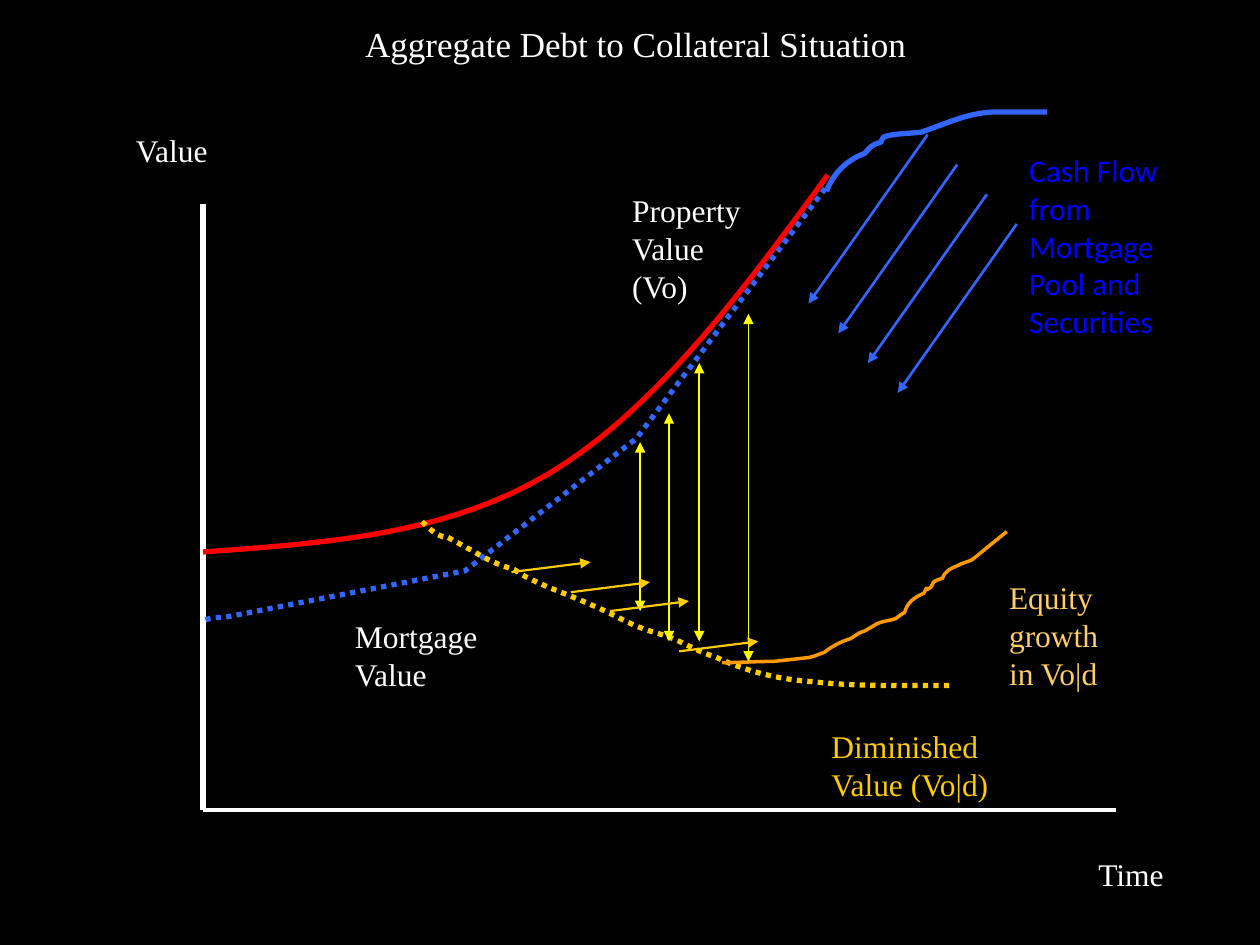
import pptx
import pptx.dml.color
import pptx.enum.dml
import pptx.enum.shapes
import pptx.enum.text
import pptx.oxml.xmlchemy
import pptx.util

Pt = pptx.util.Pt
RGBColor = pptx.dml.color.RGBColor
OxmlElement = pptx.oxml.xmlchemy.OxmlElement

BLACK = RGBColor(0x00, 0x00, 0x00)
WHITE = RGBColor(0xFF, 0xFF, 0xFF)
RED = RGBColor(0xFF, 0x00, 0x00)
BLUE = RGBColor(0x33, 0x66, 0xFF)
DEEP_BLUE = RGBColor(0x00, 0x00, 0xFF)
YELLOW = RGBColor(0xFF, 0xFF, 0x00)
GOLD = RGBColor(0xFF, 0xCC, 0x00)
ORANGE = RGBColor(0xFF, 0x99, 0x00)
SAND = RGBColor(0xFF, 0xCC, 0x66)

SERIF = "Times New Roman"
SANS = "Calibri"

PROPERTY_VALUE = [
    (116, 315.4),
    (185.8, 310.3, 254.9, 306, 314.6, 270),
    (374.4, 234, 424.1, 167, 473, 100),
]
MORTGAGE_VALUE = [
    (117.4, 354.2),
    (121, 352.8, 124.6, 352.8, 128.2, 352.8),
    (265.7, 326.2),
    (363.6, 250.6),
    (473, 105.8),
]
DIMINISHED_VALUE = [
    (241.2, 298.1),
    (242.6, 299.5, 247.7, 304.6, 251.3, 306),
    (257.8, 308.9, 250.6, 303.8, 259.2, 308.9),
    (263.5, 311, 265, 312.5, 270, 314.6),
    (276.5, 319, 285.8, 323.3, 293.8, 325.4),
    (303.1, 332.6, 325.4, 339.8, 337.7, 345.6),
    (347, 349.2, 356.4, 355, 365.8, 358.6),
    (375.1, 362.2, 378.7, 362.2, 386.6, 365.8),
    (393.1, 368.6, 400.3, 373, 408.2, 375.1),
    (424.8, 383, 443.5, 388.1, 463.7, 389.5),
    (490.3, 392.4, 515.5, 391.7, 543.6, 391.7),
]
EQUITY_GROWTH = [
    (412.6, 378.7),
    (422.6, 378.7, 432, 378, 442.1, 378),
    (448.6, 377.3, 462.2, 375.8, 462.2, 375.8),
    (465.8, 375.1, 468, 373.7, 470.9, 373),
    (475.2, 369.4, 481, 366.5, 486, 365),
    (491.8, 361.4, 489.6, 362.2, 493.9, 360.7),
    (495.4, 360, 497.5, 358.6, 499, 357.8),
    (502.6, 355, 507.6, 355, 511.9, 353.5),
    (513.4, 352.1, 514.8, 351.4, 517, 349.9),
    (518.4, 344.2, 522.7, 341.3, 527.8, 339.1),
    (532.1, 331.9, 526.3, 339.8, 532.1, 335.5),
    (532.8, 334.8, 532.8, 333.4, 533.5, 332.6),
    (535, 331.2, 537.1, 331.2, 538.6, 330.5),
    (540, 326.2, 543.6, 324.7, 547.2, 323.3),
    (549.4, 321.8, 553.7, 321.1, 555.8, 319.7),
    (575.3, 303.8),
]
CASH_FLOW = [
    (472.3, 109.4),
    (475.9, 99.4, 483.8, 91.4, 493.9, 87.8),
    (497.5, 84.2, 497.5, 82.8, 503.3, 81.4),
    (504, 80.6, 504, 79.2, 504.7, 78.5),
    (509, 76.3, 521.3, 76.3, 526.3, 75.6),
    (539.3, 71.3, 552.2, 64.8, 566.6, 64.1),
    (577.4, 64.1, 587.5, 64.1, 598.3, 64.1),
]
CURVES = [
    (PROPERTY_VALUE, RED, 3, False),
    (MORTGAGE_VALUE, BLUE, 3, True),
    (DIMINISHED_VALUE, GOLD, 3, True),
    (EQUITY_GROWTH, ORANGE, 2, False),
    (CASH_FLOW, BLUE, 3, False),
]
LABELS = [
    ("Aggregate Debt to Collateral Situation", 201.6, 9.4, 448, 31, 20, SERIF, WHITE),
    ("Value", 70.6, 71.3, 62.6, 29, 18, SERIF, WHITE),
    ("Time", 620.6, 485.3, 67.7, 29, 18, SERIF, WHITE),
    ("Property Value (Vo)", 354.2, 105.8, 90.7, 72, 18, SERIF, WHITE),
    ("Mortgage Value", 195.8, 349.2, 90.7, 50.4, 18, SERIF, WHITE),
    ("Diminished Value (Vo|d)", 468, 411.8, 113, 50.4, 18, SERIF, GOLD),
    ("Equity growth in Vo|d", 569.5, 326.9, 68.4, 72, 18, SERIF, SAND),
    ("Cash Flow from Mortgage Pool and Securities", 581, 82.8, 108, 115.2, 18, SANS, DEEP_BLUE),
]
GAP_ARROWS = [
    (365.8, 252.7, 349.2),
    (382.3, 236.2, 366.5),
    (399.6, 207.4, 366.5),
    (427.7, 179.3, 378),
]
EQUITY_ARROW_STARTS = [(292.3, 326.9), (326.2, 338.4), (348.5, 349.2), (388.1, 372.2)]


def add_line(s, x1, y1, x2, y2, color, width, ends=()):
    c = s.shapes.add_connector(
        pptx.enum.shapes.MSO_CONNECTOR.STRAIGHT, Pt(x1), Pt(y1), Pt(x2), Pt(y2))
    c.line.color.rgb = color
    c.line.width = Pt(width)
    ln = c.line._get_or_add_ln()
    for end in ends:
        arrow = OxmlElement(f"a:{end}")
        arrow.set("type", "triangle")
        ln.append(arrow)
    c._element.spPr.append(OxmlElement("a:effectLst"))


def add_curve(s, segments, color, width, dotted):
    x, y = segments[0]
    fb = s.shapes.build_freeform(Pt(x), Pt(y))
    for segment in segments[1:]:
        if len(segment) == 2:
            segment = (x, y) + segment * 2
        x, y = segment[-2:]
        fb.add_line_segments(
            [(Pt(a), Pt(b)) for a, b in zip(segment[::2], segment[1::2])], close=False)
    sp = fb.convert_to_shape()
    sp.shadow.inherit = False
    sp.fill.background()
    sp.line.color.rgb = color
    sp.line.width = Pt(width)
    if dotted:
        sp.line.dash_style = pptx.enum.dml.MSO_LINE.ROUND_DOT
    steps = sp._element.xpath(".//a:path/a:lnTo")
    for i in range(0, len(steps), 3):
        bezier = OxmlElement("a:cubicBezTo")
        steps[i].addprevious(bezier)
        for step in steps[i:i + 3]:
            bezier.append(step[0])
            step.getparent().remove(step)


def add_label(s, text, x, y, w, h, size, font, color):
    tf = s.shapes.add_textbox(Pt(x), Pt(y), Pt(w), Pt(h)).text_frame
    tf.word_wrap = True
    tf.auto_size = pptx.enum.text.MSO_AUTO_SIZE.SHAPE_TO_FIT_TEXT
    tf.text = text
    p = tf.paragraphs[0]
    p.line_spacing = Pt(size * 1.2)
    r = p.runs[0]
    r.font.size = Pt(size)
    r.font.name = font
    r.font.color.rgb = color


def main():
    prs = pptx.Presentation()
    prs.slide_width, prs.slide_height = Pt(720), Pt(540)
    s = prs.slides.add_slide(prs.slide_layouts[6])
    s.background.fill.solid()
    s.background.fill.fore_color.rgb = BLACK

    add_line(s, 116, 116.8, 116, 463, WHITE, 3)
    add_line(s, 116, 463, 638, 463, WHITE, 2)
    for curve in CURVES:
        add_curve(s, *curve)
    for x, top, bottom in GAP_ARROWS:
        add_line(s, x, top, x, bottom, YELLOW, 1, ("headEnd", "tailEnd"))
    for x, y in EQUITY_ARROW_STARTS:
        add_line(s, x, y, x + 45.2, y - 5.7, GOLD, 1.25, ("tailEnd",))
    for i in range(4):
        x, y = 530 + 17 * i, 77 + 17 * i
        add_line(s, x, y, x - 68, y + 96.5, BLUE, 1.5, ("tailEnd",))
    for label in LABELS:
        add_label(s, *label)

    prs.save("out.pptx")


if __name__ == "__main__":
    main()
